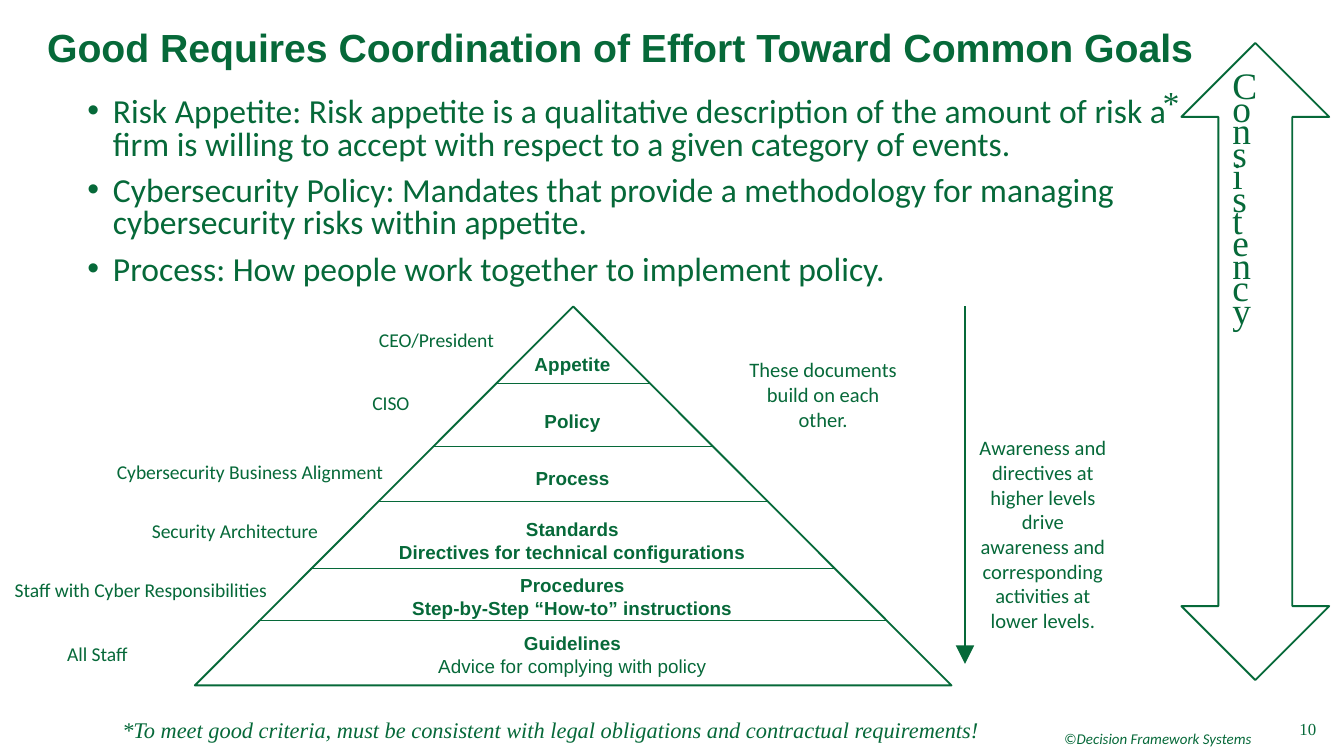
from lxml import etree
from pptx import Presentation
from pptx.dml.color import RGBColor
from pptx.enum.shapes import MSO_CONNECTOR, MSO_SHAPE
from pptx.enum.text import MSO_ANCHOR, MSO_AUTO_SIZE, PP_ALIGN
from pptx.oxml.ns import qn
from pptx.util import Pt

LEFT, CENTER = PP_ALIGN.LEFT, PP_ALIGN.CENTER
TOP = MSO_ANCHOR.TOP
GROW, FIXED = MSO_AUTO_SIZE.SHAPE_TO_FIT_TEXT, MSO_AUTO_SIZE.NONE
TRIANGLE, DOUBLE_ARROW = MSO_SHAPE.ISOSCELES_TRIANGLE, MSO_SHAPE.LEFT_RIGHT_ARROW
STRAIGHT = MSO_CONNECTOR.STRAIGHT
GREEN = "066939"
EMU_PER_PX = 9144  # 100 px to the inch
NARROW, MEDIUM, WIDE = (6, 3), (7, 4), (10, 5)  # side and top insets


def px(*lengths):
    return [round(n * EMU_PER_PX) for n in lengths]


def color(hex_string):
    return RGBColor.from_string(hex_string)


class SlideBuilder:
    def __init__(self, slide):
        self.slide = slide
        self.shapes = slide.shapes

    def fill_frame(self, frame, lines, insets, frame_format, para_format, font_format):
        side, top = px(*insets)
        frame_values = {"margin_left": side, "margin_right": side, "margin_top": top,
                        "margin_bottom": top, "vertical_anchor": TOP, **frame_format}
        for key, value in frame_values.items():
            setattr(frame, key, value)
        for i, line in enumerate(lines):
            para = frame.paragraphs[0] if i == 0 else frame.add_paragraph()
            run = para.add_run()
            run.text = line
            for key, value in para_format.items():
                setattr(para, key, value)
            for key, value in font_format.items():
                setattr(run.font, key, value)
            run.font.color.rgb = color(GREEN)
        return frame

    def title(self, box, line, size):
        holder = self.shapes.title
        holder.left, holder.top, holder.width, holder.height = px(*box)
        self.fill_frame(holder.text_frame, [line], (0, 0),
                        {"word_wrap": True, "auto_size": FIXED},
                        {"alignment": LEFT, "line_spacing": 0.9},
                        {"name": "Arial", "size": Pt(size), "bold": True})

    def text(self, box, lines, font, size, insets=NARROW, wrap=True, grow=True,
             align=LEFT, spacing=1.0, indent=0, **style):
        frame = self.shapes.add_textbox(*px(*box)).text_frame
        self.fill_frame(frame, lines, insets,
                        {"word_wrap": wrap, "auto_size": GROW if grow else FIXED},
                        {"alignment": align, "line_spacing": spacing},
                        {"name": font, "size": Pt(size), **style})
        if indent:
            for para in frame.paragraphs:
                para._p.get_or_add_pPr().set("marL", str(px(indent)[0]))
        return frame

    def bullets(self, box, lines, size):
        frame = self.text(box, lines, "Calibri", size, insets=(0, 0), grow=False,
                          spacing=0.8, indent=19)
        for i, para in enumerate(frame.paragraphs):
            if i:
                para.space_before = Pt(7.5)
            props = para._p.get_or_add_pPr()
            props.set("indent", str(px(-19)[0]))
            bullet_color = etree.SubElement(props, qn("a:buClr"))
            etree.SubElement(bullet_color, qn("a:srgbClr"), val=GREEN)
            etree.SubElement(props, qn("a:buFont"), typeface="Arial")
            etree.SubElement(props, qn("a:buChar"), char="•")

    def outline(self, kind, box, rotation=0):
        shape = self.shapes.add_shape(kind, *px(*box))
        shape.rotation = rotation
        shape.shadow.inherit = False
        shape.fill.background()
        shape.line.color.rgb = color(GREEN)
        shape.line.width = Pt(1)

    def line(self, start, end, width, arrow=False):
        connector = self.shapes.add_connector(STRAIGHT, *px(*start, *end))
        connector.line.color.rgb = color(GREEN)
        connector.line.width = Pt(width)
        props = connector._element.spPr
        if arrow:
            etree.SubElement(props.find(qn("a:ln")), qn("a:tailEnd"),
                             type="triangle", w="lg", len="lg")
        etree.SubElement(props, qn("a:effectLst"))


prs = Presentation()
prs.slide_width = px(1000)[0]
prs.slide_height = prs.slide_width * 9 // 16
page = SlideBuilder(prs.slides.add_slide(prs.slide_layouts[5]))

# Title and definitions
page.title((35, 21, 877, 45), "Good Requires Coordination of Effort Toward Common Goals", 21)
page.bullets((65, 73, 815, 149), [
    "Risk Appetite: Risk appetite is a qualitative description of the amount of risk a "
    "firm is willing to accept with respect to a given category of events.",
    "Cybersecurity Policy: Mandates that provide a methodology for managing "
    "cybersecurity risks within appetite.",
    "Process: How people work together to implement policy.",
], 18)

# Pyramid: each side falls one px for every px outward
APEX_X, APEX_Y = 426, 228
page.outline(TRIANGLE, (145, APEX_Y, 563, 282))
for divider_y in (285, 332, 373, 423, 462):
    half = divider_y - APEX_Y
    page.line((APEX_X - half, divider_y), (APEX_X + half, divider_y), 0.5)

# Document tiers: top, width, lines
tiers = [
    (259, 72, ["Appetite"]),
    (302, 60, ["Policy"]),
    (344, 72, ["Process"]),
    (382, 276, ["Standards", "Directives for technical configurations"]),
    (424, 256, ["Procedures", "Step-by-Step “How-to” instructions"]),
    (467, 218, ["Guidelines", "Advice for complying with policy"]),
]
for top, width, lines in tiers:
    tier = page.text((APEX_X - width / 2, top, width, 6 + 17 * len(lines)), lines,
                     "Arial", 10.13, wrap=False, align=CENTER, bold=True)
tier.paragraphs[1].runs[0].font.bold = False

# Responsible roles: left, top, width, indent, role
roles = [
    (244, 241, 137, 32, "CEO/President"),
    (239, 288, 101, 32, "CISO"),
    (81, 339, 214, 0, "Cybersecurity Business Alignment"),
    (75, 383, 189, 32, "Security Architecture"),
    (5, 427, 203, 0, "Staff with Cyber Responsibilities"),
    (12, 475, 123, 32, "All Staff"),
]
for left, top, width, indent, role in roles:
    page.text((left, top, width, 24), [role], "Calibri", 10.5, indent=indent)

# Remarks and downward arrow
page.text((519, 263, 155, 63), ["These documents build on each other."],
          "Calibri", 11, align=CENTER, indent=32)
page.line((718, 228), (718, 494), 1.5, arrow=True)
page.text((690, 321, 140, 155),
          ["Awareness and directives at higher levels drive awareness and "
           "corresponding activities at lower levels."],
          "Calibri", 11, align=CENTER, indent=32)

# Consistency arrow
page.outline(DOUBLE_ARROW, (697, 214, 474, 110), rotation=90)
consistency = page.text((910, 57, 38, 490), ["Consistency"], "Times New Roman", 20,
                        insets=MEDIUM, spacing=0.5)
consistency._txBody.bodyPr.set("vert", "wordArtVert")

# Footnote and its mark
page.text((84, 529, 779, 28),
          ["*To meet good criteria, must be consistent with legal obligations and "
           "contractual requirements!"],
          "Times New Roman", 12, insets=MEDIUM, italic=True)
page.text((857, 57, 34, 38), ["*"], "Times New Roman", 18, insets=MEDIUM, italic=True)

# Footer
page.text((782, 538, 161, 24), ["©Decision Framework Systems"], "Calibri", 8,
          insets=WIDE, wrap=False, italic=True)
page.text((957, 530, 35, 25), ["10"], "Times New Roman", 9, insets=WIDE, wrap=False)

prs.save("out.pptx")
